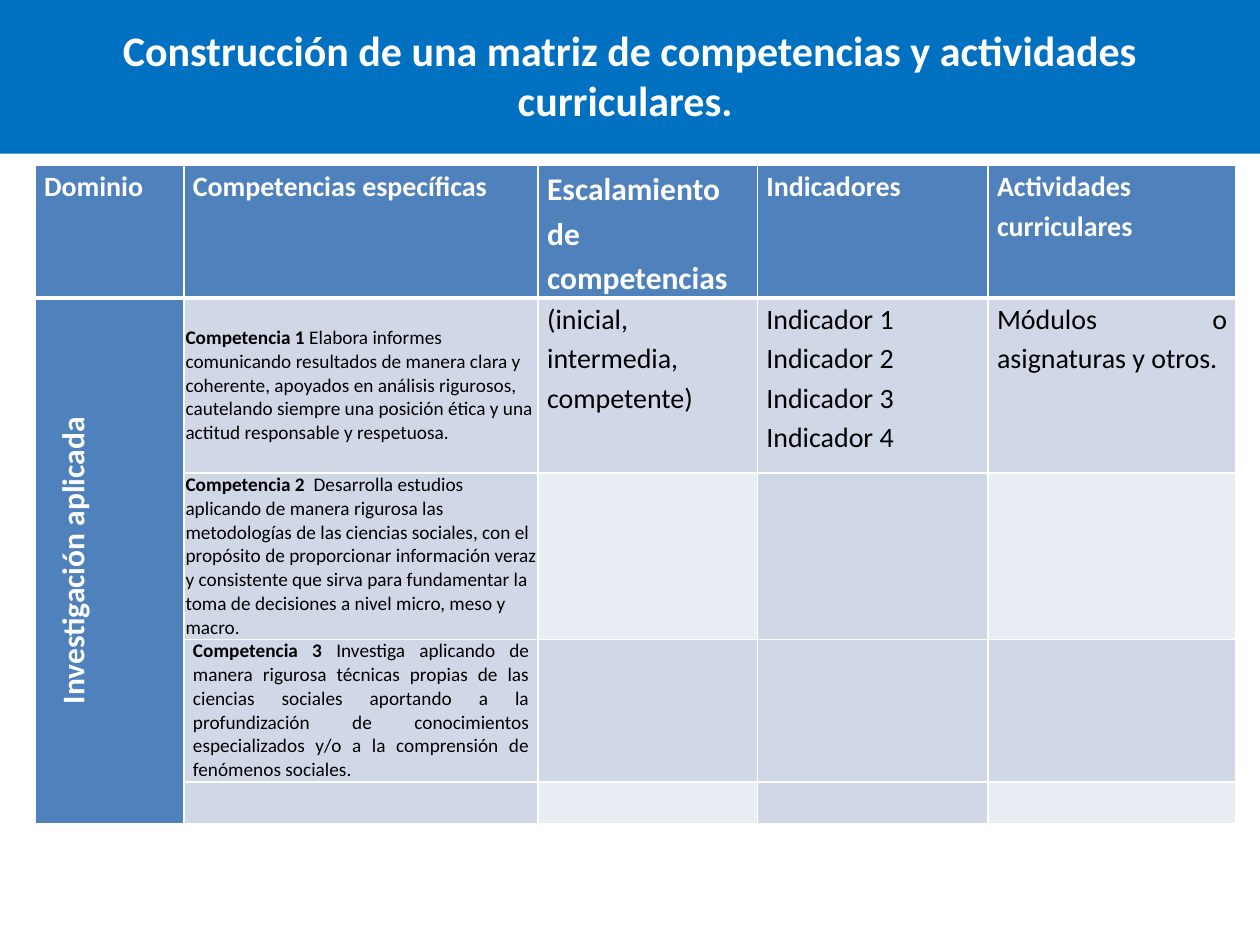
from dataclasses import dataclass
from typing import Any

from lxml import etree
from pptx import Presentation
from pptx.dml.color import RGBColor
from pptx.enum.text import MSO_ANCHOR, MSO_AUTO_SIZE, PP_ALIGN
from pptx.oxml.ns import qn
from pptx.util import Cm, Pt

CENTER, JUSTIFY, LEFT = PP_ALIGN.CENTER, PP_ALIGN.JUSTIFY, PP_ALIGN.LEFT
TOP, MIDDLE = MSO_ANCHOR.TOP, MSO_ANCHOR.MIDDLE
NO_AUTOFIT = MSO_AUTO_SIZE.NONE
TITLE_ONLY = 5


@dataclass(frozen=True)
class Theme:
    font: str = "Calibri"
    banner: str = "0070C0"
    heading: str = "4F81BD"
    band: str = "D0D8E8"
    pale: str = "E9EDF4"
    white: str = "FFFFFF"
    black: str = "000000"
    title_size: int = 24
    large_size: int = 18
    body_size: int = 16
    detail_size: int = 11


THEME = Theme()


@dataclass(frozen=True)
class TextRun:
    text: str
    bold: bool = False


@dataclass(frozen=True)
class MatrixCell:
    paragraphs: tuple[tuple[TextRun, ...], ...] = ()
    fill: str = THEME.band
    color: str = THEME.black
    size: int = THEME.body_size
    align: Any = JUSTIFY
    anchor: Any = TOP
    spacing: float = 1.15
    inset: float = 0.18
    vertical: bool = False


def heading(text: str, size: int = THEME.body_size, **layout: Any) -> MatrixCell:
    return MatrixCell(((TextRun(text, True),),), THEME.heading, THEME.white, size, **layout)


def body(*lines: str) -> MatrixCell:
    return MatrixCell(tuple((TextRun(line),) for line in lines))


def competence(label: str, description: str, **layout: Any) -> MatrixCell:
    return MatrixCell(((TextRun(label, True), TextRun(description)),),
                      size=THEME.detail_size, spacing=1.0, **layout)


def apply_format(target: Any, values: dict[str, Any]) -> None:
    for attribute, value in values.items():
        setattr(target, attribute, value)


def add_run(paragraph: Any, text: str, size: int, color: str, bold: bool) -> None:
    run = paragraph.add_run()
    run.text = text
    apply_format(run.font, {"name": THEME.font, "size": Pt(size), "bold": bold})
    run.font.color.rgb = RGBColor.from_string(color)


def set_borders(cell: Any, widths: dict[str, int]) -> None:
    properties = cell._tc.get_or_add_tcPr()
    for side, width in widths.items():
        line = etree.SubElement(properties, qn(f"a:ln{side}"), w=str(Pt(width)))
        solid = etree.SubElement(line, qn("a:solidFill"))
        etree.SubElement(solid, qn("a:srgbClr"), val=THEME.white)


def draw_cell(cell: Any, content: MatrixCell, borders: dict[str, int]) -> None:
    set_borders(cell, borders)
    cell.fill.solid()
    cell.fill.fore_color.rgb = RGBColor.from_string(content.fill)
    apply_format(cell, {"margin_left": Cm(content.inset), "margin_right": Cm(content.inset),
                        "margin_top": 0, "margin_bottom": 0,
                        "vertical_anchor": content.anchor})
    if content.vertical:
        cell._tc.get_or_add_tcPr().set("vert", "vert270")
    frame = cell.text_frame
    for index, runs in enumerate(content.paragraphs or ((),)):
        paragraph = frame.add_paragraph() if index else frame.paragraphs[0]
        apply_format(paragraph, {"alignment": content.align, "line_spacing": content.spacing})
        for run in runs:
            add_run(paragraph, run.text, content.size, content.color, run.bold)


# Matrix content, row by row
DOMAIN = heading("Investigación aplicada", THEME.large_size, align=CENTER,
                 spacing=1.5, vertical=True)
BAND, PALE = MatrixCell(), MatrixCell(fill=THEME.pale)
COMPACT = {"align": LEFT, "anchor": MIDDLE, "inset": 0.03}
MATRIX = (
    (heading("Dominio"), heading("Competencias específicas"),
     heading("Escalamiento de competencias", THEME.large_size),
     heading("Indicadores"), heading("Actividades curriculares")),
    (DOMAIN,
     competence("Competencia 1 ",
                "Elabora informes comunicando resultados de manera clara y coherente, "
                "apoyados en análisis rigurosos, cautelando siempre una posición ética "
                "y una actitud responsable y respetuosa.", **COMPACT),
     body("(inicial, intermedia, competente)"),
     body(*(f"Indicador {number}" for number in range(1, 5))),
     body("Módulos o asignaturas y otros.")),
    (None,
     competence("Competencia 2  ",
                "Desarrolla estudios aplicando de manera rigurosa las metodologías de "
                "las ciencias sociales, con el propósito de proporcionar información "
                "veraz y consistente que sirva para fundamentar la toma de decisiones "
                "a nivel micro, meso y macro.", **COMPACT),
     PALE, BAND, PALE),
    (None,
     competence("Competencia 3 ",
                "Investiga aplicando de manera rigurosa técnicas propias de las ciencias "
                "sociales aportando a la profundización de conocimientos especializados "
                "y/o a la comprensión de fenómenos sociales."),
     BAND, BAND, BAND),
    (None, BAND, PALE, BAND, PALE),
)
COLUMN_WIDTHS = (3.0, 7.14, 4.42, 4.65, 5.0)
ROW_HEIGHTS = (1.73, 3.53, 2.44, 2.44, 0.84)


def draw_title(slide: Any) -> None:
    title = slide.shapes.title
    apply_format(title, {"left": Cm(0), "top": Cm(-0.08),
                         "width": Cm(25.4), "height": Cm(3.18)})
    title.fill.solid()
    title.fill.fore_color.rgb = RGBColor.from_string(THEME.banner)
    apply_format(title.text_frame, {"vertical_anchor": MIDDLE, "word_wrap": True,
                                    "auto_size": NO_AUTOFIT})
    paragraph = title.text_frame.paragraphs[0]
    paragraph.alignment = CENTER
    add_run(paragraph, "Construcción de una matriz de competencias y actividades curriculares. ",
            THEME.title_size, THEME.white, True)


def draw_matrix(slide: Any) -> None:
    matrix = slide.shapes.add_table(
        len(ROW_HEIGHTS), len(COLUMN_WIDTHS), Cm(0.71), Cm(3.33),
        Cm(sum(COLUMN_WIDTHS)), Cm(sum(ROW_HEIGHTS))).table
    for column, width in zip(matrix.columns, COLUMN_WIDTHS):
        column.width = Cm(width)
    for row, height in zip(matrix.rows, ROW_HEIGHTS):
        row.height = Cm(height)
    # The domain spans every row below the header
    matrix.cell(1, 0).merge(matrix.cell(len(ROW_HEIGHTS) - 1, 0))
    for row_index, contents in enumerate(MATRIX):
        borders = {"L": 1, "R": 1, "T": 3 if row_index == 1 else 1,
                   "B": 3 if row_index == 0 else 1}
        for column_index, content in enumerate(contents):
            if content is not None:
                draw_cell(matrix.cell(row_index, column_index), content, borders)


def main() -> None:
    presentation = Presentation()
    apply_format(presentation, {"slide_width": Cm(25.4), "slide_height": Cm(19.05)})
    slide = presentation.slides.add_slide(presentation.slide_layouts[TITLE_ONLY])
    draw_title(slide)
    draw_matrix(slide)
    presentation.save("out.pptx")


if __name__ == "__main__":
    main()
